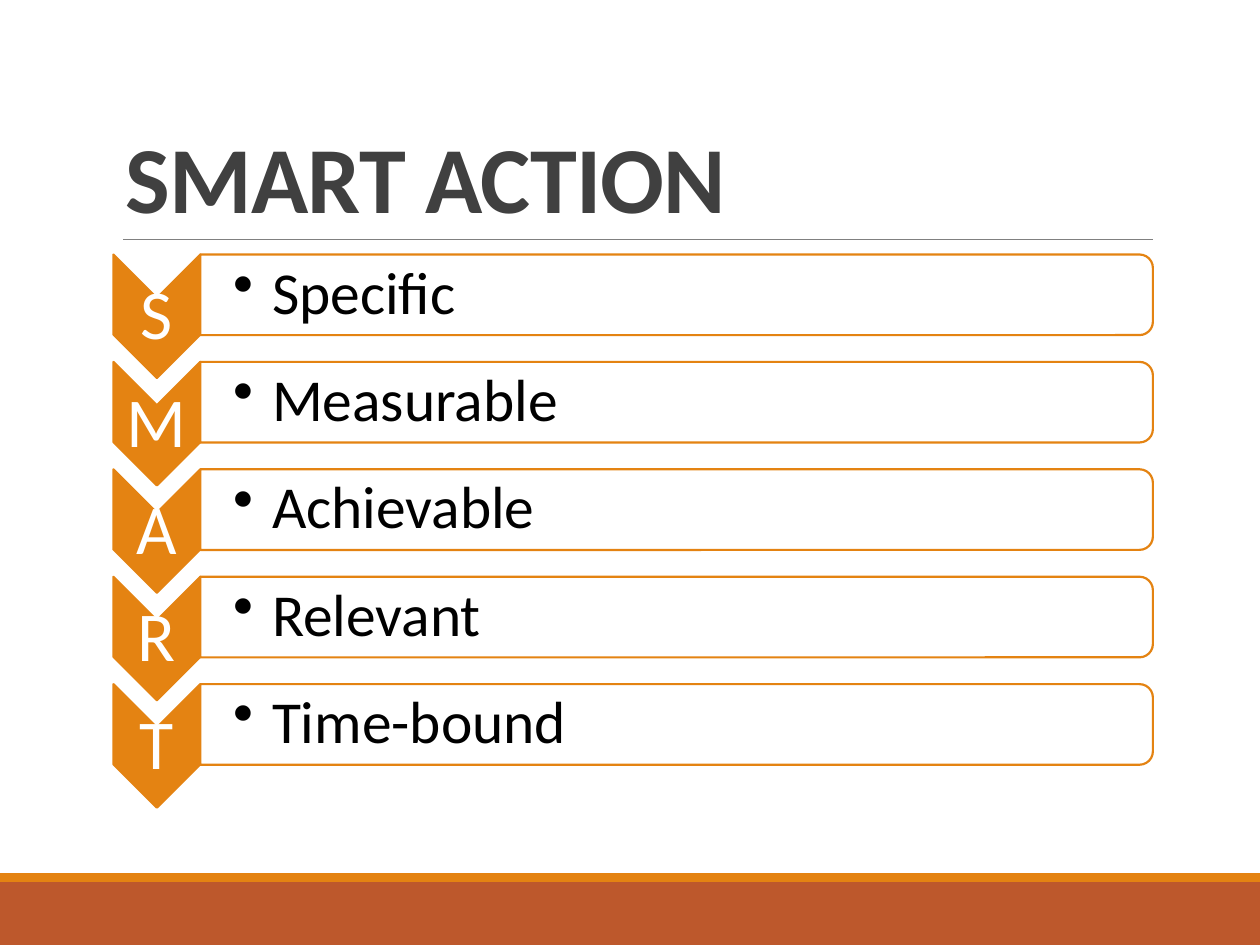
from lxml.etree import SubElement
from pptx import Presentation
from pptx.dml.color import RGBColor
from pptx.enum.shapes import MSO_CONNECTOR, MSO_SHAPE
from pptx.enum.text import MSO_ANCHOR, PP_ALIGN
from pptx.oxml.ns import qn
from pptx.util import Inches, Pt

# Content
TITLE = "SMART ACTION"
STEPS = [
    ("S", "Specific"),
    ("M", "Measurable"),
    ("A", "Achievable"),
    ("R", "Relevant"),
    ("T", "Time-bound"),
]

# Style
FONT = "Calibri"
ORANGE = RGBColor(0xE4, 0x83, 0x12)
RUST = RGBColor(0xBD, 0x58, 0x2C)
GRAY = RGBColor(0x80, 0x80, 0x80)
DARK = RGBColor(0x40, 0x40, 0x40)
WHITE = RGBColor(0xFF, 0xFF, 0xFF)
BLACK = RGBColor(0, 0, 0)

# Row layout, in inches
FIRST_TOP, LAST_TOP = 2.02, 5.43
PITCH = (LAST_TOP - FIRST_TOP) / (len(STEPS) - 1)
CHEVRON_LEFT, CHEVRON_W, CHEVRON_H = 0.9, 0.69, 0.98
BAR_LEFT, BAR_W, BAR_H = 1.59, 7.56, 0.64


def add_shape(slide, kind, x, y, w, h, fill, line=None, rotated=False):
    """Add a shape covering the box x, y, w, h, turned a quarter if rotated."""
    if rotated:
        x, y, w, h = x + (w - h) / 2, y + (h - w) / 2, h, w
    s = slide.shapes.add_shape(kind, Inches(x), Inches(y), Inches(w), Inches(h))
    s.rotation = 90 if rotated else 0
    s.shadow.inherit = False
    s.fill.solid()
    s.fill.fore_color.rgb = fill
    if line is None:
        s.line.fill.background()
    else:
        s.line.color.rgb = line
        s.line.width = Pt(1.25)
    return s


def add_text(slide, text, x, y, w, h, size, color, anchor, insets, spacing):
    s = slide.shapes.add_textbox(Inches(x), Inches(y), Inches(w), Inches(h))
    tf = s.text_frame
    tf.word_wrap = True
    tf.vertical_anchor = anchor
    tf.margin_left, tf.margin_top, tf.margin_right, tf.margin_bottom = map(Inches, insets)
    p = tf.paragraphs[0]
    p.text = text
    p.line_spacing = spacing
    p.font.name = FONT
    p.font.size = Pt(size)
    p.font.color.rgb = color
    return p


def add_bullet(p, indent):
    pPr = p._p.get_or_add_pPr()
    pPr.set("marL", str(Inches(indent)))
    pPr.set("indent", str(-Inches(indent)))
    bullet = pPr.makeelement(qn("a:buChar"), {"char": "•"})
    pPr.insert_element_before(bullet, "a:tabLst", "a:defRPr", "a:extLst")


prs = Presentation()
prs.slide_width, prs.slide_height = Inches(10), Inches(7.5)
slide = prs.slides.add_slide(prs.slide_layouts[6])

# Footer bands
add_shape(slide, MSO_SHAPE.RECTANGLE, 0, 7, 10, 0.5, RUST)
add_shape(slide, MSO_SHAPE.RECTANGLE, 0, 6.93, 10, 0.07, ORANGE)

# Title and the rule below it
rule = slide.shapes.add_connector(
    MSO_CONNECTOR.STRAIGHT, Inches(0.98), Inches(1.9), Inches(9.15), Inches(1.9))
rule.line.color.rgb = GRAY
rule.line.width = Pt(0.5)
SubElement(rule._element.spPr, qn("a:effectLst"))
p = add_text(slide, TITLE, 0.9, 0.31, 8.25, 1.59, 54, DARK,
             MSO_ANCHOR.BOTTOM, (0.1, 0.05, 0.1, 0.05), 0.85)
p.font.bold = True
p.runs[0].font._element.set("spc", "-50")

# One chevron and one bar per step
for i, (letter, word) in enumerate(STEPS):
    top = FIRST_TOP + i * PITCH
    add_shape(slide, MSO_SHAPE.CHEVRON, CHEVRON_LEFT, top, CHEVRON_W, CHEVRON_H,
              ORANGE, ORANGE, rotated=True)
    p = add_text(slide, letter, CHEVRON_LEFT, top + 0.35, CHEVRON_W, 0.29, 40, WHITE,
                 MSO_ANCHOR.MIDDLE, (0.03,) * 4, 0.9)
    p.alignment = PP_ALIGN.CENTER

    add_shape(slide, MSO_SHAPE.ROUND_2_SAME_RECTANGLE, BAR_LEFT, top, BAR_W, BAR_H,
              WHITE, ORANGE, rotated=True)
    p = add_text(slide, word, BAR_LEFT, top + 0.03, BAR_W - 0.03, BAR_H - 0.06, 34, BLACK,
                 MSO_ANCHOR.MIDDLE, (0.26, 0.02, 0.02, 0.02), 0.9)
    add_bullet(p, 0.31)

prs.save("out.pptx")
